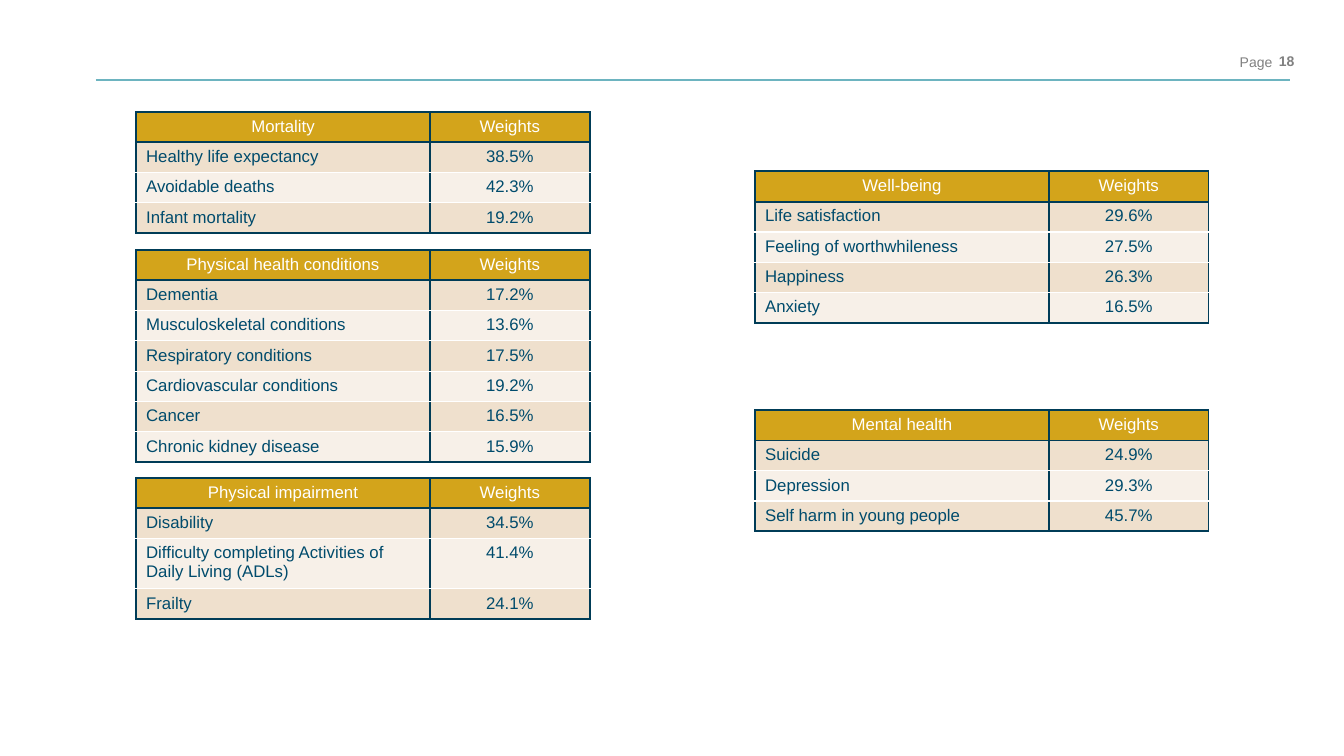
from dataclasses import dataclass

from lxml.etree import SubElement
from pptx import Presentation
from pptx.dml.color import RGBColor
from pptx.enum.shapes import MSO_CONNECTOR
from pptx.enum.text import MSO_ANCHOR, PP_ALIGN as Align
from pptx.oxml import parse_xml
from pptx.oxml.ns import nsdecls, qn
from pptx.slide import Slide
from pptx.table import _Cell as Cell
from pptx.text.text import _Paragraph as Paragraph
from pptx.util import Pt

NAVY = RGBColor(0x00, 0x3C, 0x57)
BLUE = RGBColor(0x00, 0x4B, 0x6C)
TEAL = RGBColor(0x6D, 0xB4, 0xC0)
GOLD = RGBColor(0xD3, 0xA4, 0x1B)
SAND = RGBColor(0xEF, 0xE0, 0xCD)
CREAM = RGBColor(0xF7, 0xF0, 0xE8)
GREY = RGBColor(0x80, 0x80, 0x80)
WHITE = RGBColor(0xFF, 0xFF, 0xFF)

FONT = "Arial"
COLUMN_WIDTHS = (210, 114)
ROW_HEIGHT = 21.6
TWO_LINE_HEIGHT = 36
LINE_CAPACITY = 40  # characters that fit on one line of the first column
LEFT_TABLES, RIGHT_TABLES = 97.2, 539.3


@dataclass(frozen=True)
class WeightTable:
    title: str
    left: float
    top: float
    rows: tuple[tuple[str, str], ...]


@dataclass(frozen=True)
class Label:
    text: str
    left: float
    top: float
    width: float
    height: float
    anchor: MSO_ANCHOR
    bold: bool


@dataclass(frozen=True)
class Border:
    color: RGBColor
    width: float


OUTLINE = Border(NAVY, 1.5)
DIVIDER = Border(WHITE, 1)

TABLES = (
    WeightTable("Mortality", LEFT_TABLES, 80, (
        ("Healthy life expectancy", "38.5%"),
        ("Avoidable deaths", "42.3%"),
        ("Infant mortality", "19.2%"),
    )),
    WeightTable("Physical health conditions", LEFT_TABLES, 178.6, (
        ("Dementia", "17.2%"),
        ("Musculoskeletal conditions", "13.6%"),
        ("Respiratory conditions", "17.5%"),
        ("Cardiovascular conditions", "19.2%"),
        ("Cancer", "16.5%"),
        ("Chronic kidney disease", "15.9%"),
    )),
    WeightTable("Physical impairment", LEFT_TABLES, 341.3, (
        ("Disability", "34.5%"),
        ("Difficulty completing Activities of Daily Living (ADLs)", "41.4%"),
        ("Frailty", "24.1%"),
    )),
    WeightTable("Well-being", RIGHT_TABLES, 122.4, (
        ("Life satisfaction", "29.6%"),
        ("Feeling of worthwhileness", "27.5%"),
        ("Happiness", "26.3%"),
        ("Anxiety", "16.5%"),
    )),
    WeightTable("Mental health", RIGHT_TABLES, 293, (
        ("Suicide", "24.9%"),
        ("Depression", "29.3%"),
        ("Self harm in young people", "45.7%"),
    )),
)

PAGE_LABELS = (
    Label("Page", 747.4, 34.6, 168.5, 19.4, MSO_ANCHOR.TOP, False),
    Label("18", 899.3, 28.8, 32.4, 28.8, MSO_ANCHOR.MIDDLE, True),
)


def style_paragraph(paragraph: Paragraph, size: float, color: RGBColor,
                    alignment: Align, bold: bool = False) -> None:
    paragraph.alignment = alignment
    paragraph.font.name = FONT
    paragraph.font.size = Pt(size)
    paragraph.font.bold = bold
    paragraph.font.color.rgb = color


def set_borders(cell: Cell, top: Border, bottom: Border) -> None:
    properties = cell._tc.get_or_add_tcPr()
    sides = (("lnL", OUTLINE), ("lnR", OUTLINE), ("lnT", top), ("lnB", bottom))
    for position, (tag, border) in enumerate(sides):
        properties.insert(position, parse_xml(
            f'<a:{tag} {nsdecls("a")} w="{Pt(border.width)}"><a:solidFill>'
            f'<a:srgbClr val="{border.color}"/></a:solidFill></a:{tag}>'))


def draw_table(slide: Slide, weights: WeightTable) -> None:
    rows = ((weights.title, "Weights"), *weights.rows)
    heights = [TWO_LINE_HEIGHT if len(name) > LINE_CAPACITY else ROW_HEIGHT
               for name, _ in rows]
    table = slide.shapes.add_table(
        len(rows), len(COLUMN_WIDTHS), Pt(weights.left), Pt(weights.top),
        Pt(sum(COLUMN_WIDTHS)), Pt(sum(heights))).table
    table.first_row = table.horz_banding = False
    for column, width in zip(table.columns, COLUMN_WIDTHS):
        column.width = Pt(width)

    for row_index, (values, height) in enumerate(zip(rows, heights)):
        table.rows[row_index].height = Pt(height)
        is_header = row_index == 0
        fill = GOLD if is_header else SAND if row_index % 2 else CREAM
        top = OUTLINE if row_index <= 1 else DIVIDER
        bottom = OUTLINE if row_index in (0, len(rows) - 1) else DIVIDER
        for column_index, value in enumerate(values):
            cell = table.cell(row_index, column_index)
            cell.text = value
            cell.fill.solid()
            cell.fill.fore_color.rgb = fill
            centred = is_header or column_index == 1
            style_paragraph(cell.text_frame.paragraphs[0], 12,
                            WHITE if is_header else BLUE,
                            Align.CENTER if centred else Align.LEFT)
            set_borders(cell, top, bottom)


def draw_label(slide: Slide, label: Label) -> None:
    shape = slide.shapes.add_textbox(Pt(label.left), Pt(label.top),
                                     Pt(label.width), Pt(label.height))
    frame = shape.text_frame
    frame.word_wrap = True
    frame.vertical_anchor = label.anchor
    frame.text = label.text
    style_paragraph(frame.paragraphs[0], 10, GREY, Align.RIGHT, label.bold)


def draw_header_rule(slide: Slide) -> None:
    rule = slide.shapes.add_connector(MSO_CONNECTOR.STRAIGHT, Pt(68.4), Pt(57.4),
                                      Pt(921.6), Pt(57.4))
    rule.line.color.rgb = TEAL
    rule.line.width = Pt(1.5)
    SubElement(rule._element.spPr, qn("a:effectLst"))


def main() -> None:
    presentation = Presentation()
    presentation.slide_width, presentation.slide_height = Pt(960), Pt(540)
    slide = presentation.slides.add_slide(presentation.slide_layouts[6])

    # Page header
    draw_header_rule(slide)
    for label in PAGE_LABELS:
        draw_label(slide, label)

    # Weight tables
    for weights in TABLES:
        draw_table(slide, weights)

    presentation.save("out.pptx")


if __name__ == "__main__":
    main()
